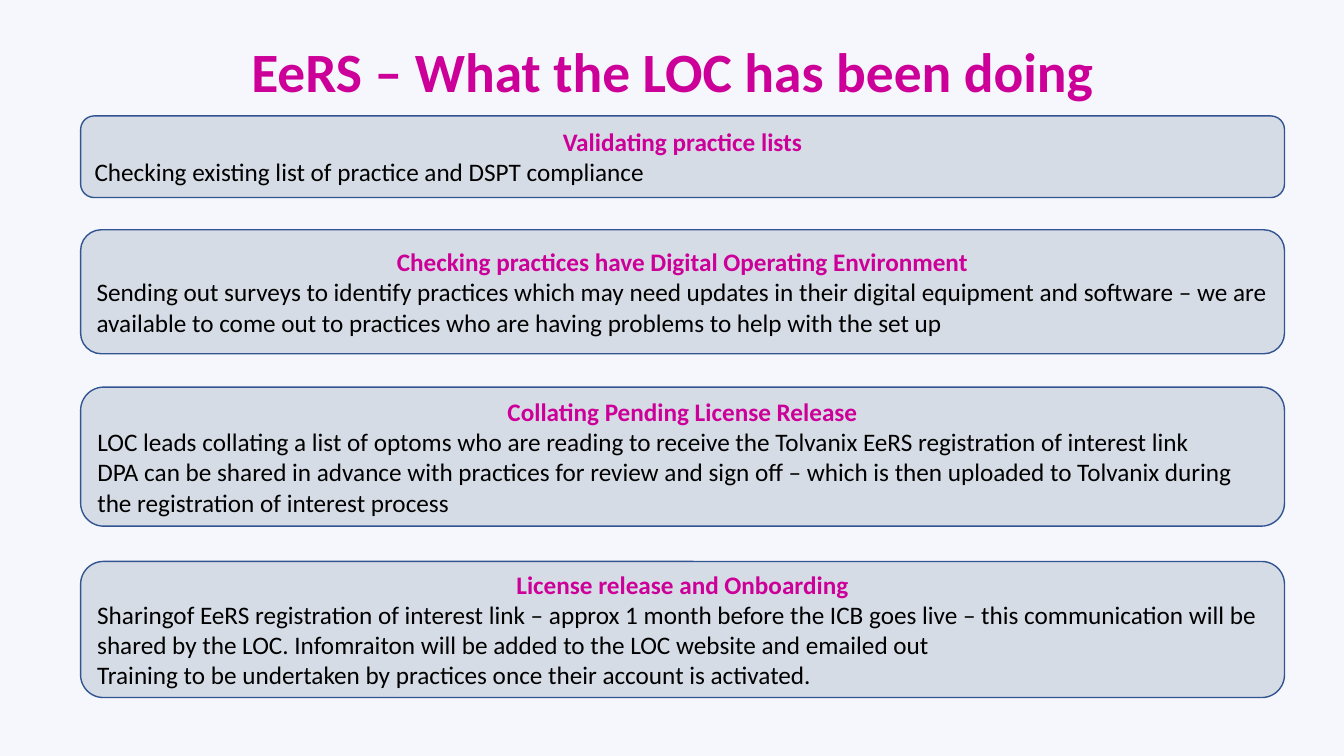
import pptx
import pptx.dml.color
import pptx.enum.shapes
import pptx.enum.text
import pptx.util

Inches = pptx.util.Inches
Pt = pptx.util.Pt
ALIGN = pptx.enum.text.PP_ALIGN
FONT = "Calibri"
COLOURS = {
    "background": "F5F7FC",
    "heading": "CC0099",
    "body": "000000",
    "panel": "D6DCE5",
    "outline": "325491",
}
PANELS = [
    (1.15, 0.81, "Validating practice lists", [
        "Checking existing list of practice and DSPT compliance",
    ]),
    (2.28, 1.23, "Checking practices have Digital Operating Environment", [
        "Sending out surveys to identify practices which may need updates in their digital "
        "equipment and software – we are available to come out to practices who are having "
        "problems to help with the set up",
    ]),
    (3.84, 1.38, "Collating Pending License Release", [
        "LOC leads collating a list of optoms who are reading to receive the Tolvanix EeRS "
        "registration of interest link",
        "DPA can be shared in advance with practices for review and sign off – which is then "
        "uploaded to Tolvanix during the registration of interest process",
    ]),
    (5.57, 1.35, "License release and Onboarding", [
        "Sharingof EeRS registration of interest link – approx 1 month before the ICB goes "
        "live – this communication will be shared by the LOC. Infomraiton will be added to "
        "the LOC website and emailed out",
        "Training to be undertaken by practices once their account is activated.",
    ]),
]


def colour(name):
    return pptx.dml.color.RGBColor.from_string(COLOURS[name])


def format_paragraph(paragraph, text, size, colour_name, bold, alignment):
    paragraph.text = text
    paragraph.alignment = alignment
    paragraph.font.name = FONT
    paragraph.font.size = Pt(size)
    paragraph.font.bold = bold
    paragraph.font.color.rgb = colour(colour_name)


def set_title(slide, text):
    title = slide.shapes.title
    title.left, title.top = Inches(0.92), Inches(0.4)
    title.width, title.height = Inches(11.5), Inches(0.67)
    frame = title.text_frame
    frame.auto_size = pptx.enum.text.MSO_AUTO_SIZE.NONE
    frame.vertical_anchor = pptx.enum.text.MSO_ANCHOR.MIDDLE
    paragraph = frame.paragraphs[0]
    format_paragraph(paragraph, text, 39.6, "heading", True, ALIGN.CENTER)
    paragraph.line_spacing = 0.9


def add_panel(slide, top, height, heading, body):
    panel = slide.shapes.add_shape(
        pptx.enum.shapes.MSO_SHAPE.ROUNDED_RECTANGLE,
        Inches(0.8), Inches(top), Inches(11.94), Inches(height))
    panel.shadow.inherit = False
    panel.fill.solid()
    panel.fill.fore_color.rgb = colour("panel")
    panel.line.color.rgb = colour("outline")
    panel.line.width = Pt(1)
    frame = panel.text_frame
    frame.word_wrap = True
    frame.vertical_anchor = pptx.enum.text.MSO_ANCHOR.MIDDLE
    format_paragraph(frame.paragraphs[0], heading, 18, "heading", True, ALIGN.CENTER)
    for text in body:
        format_paragraph(frame.add_paragraph(), text, 18, "body", False, ALIGN.LEFT)


def main():
    presentation = pptx.Presentation()
    presentation.slide_width = Inches(13.33)
    presentation.slide_height = Inches(7.5)
    slide = presentation.slides.add_slide(presentation.slide_layouts[5])
    slide.background.fill.solid()
    slide.background.fill.fore_color.rgb = colour("background")
    set_title(slide, "EeRS – What the LOC has been doing")
    for panel in PANELS:
        add_panel(slide, *panel)
    presentation.save("out.pptx")


if __name__ == "__main__":
    main()
